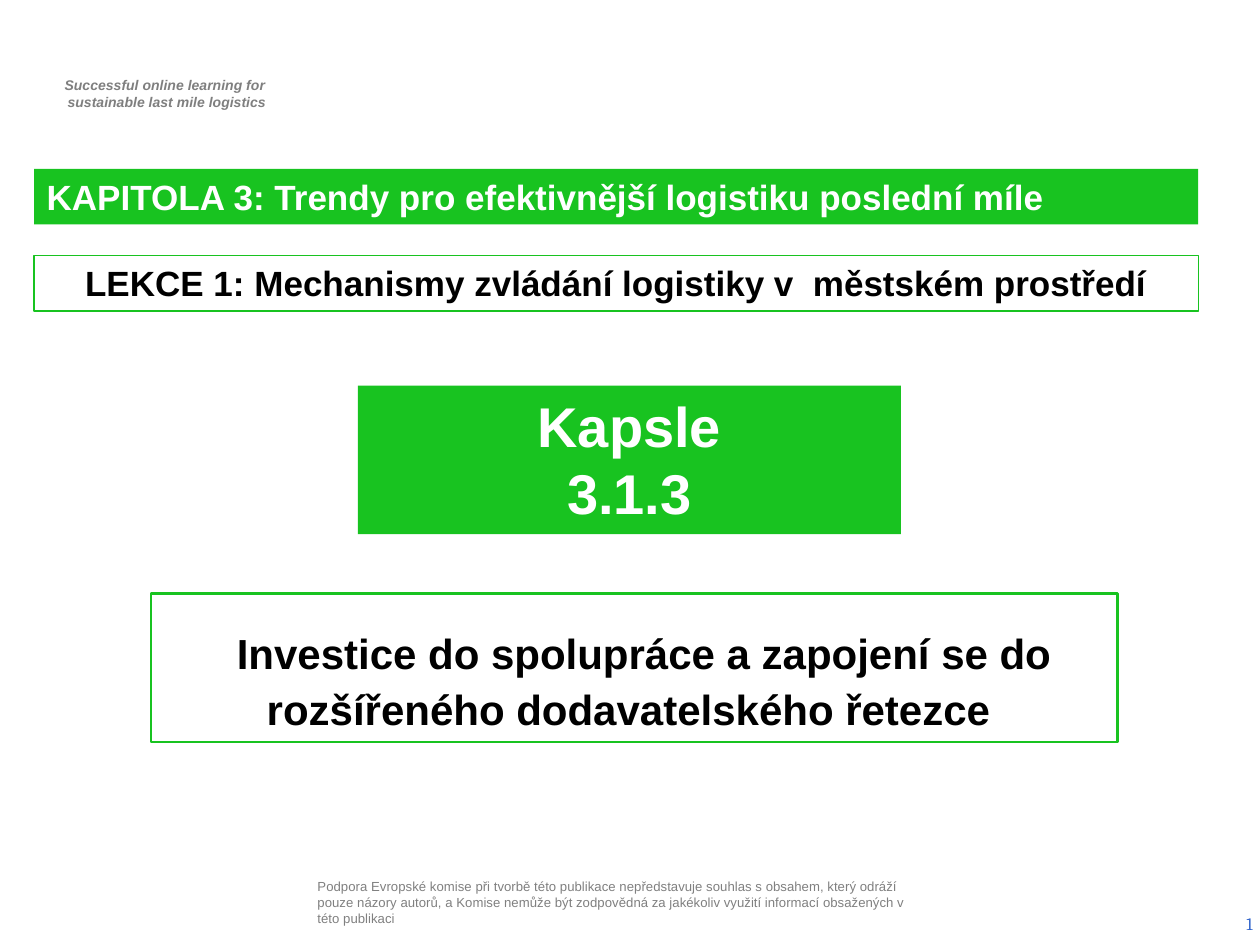
import pptx
import pptx.util
import pptx.dml.color
import pptx.enum.shapes
import pptx.enum.text
import pptx.oxml
import pptx.oxml.ns
from pptx.util import Inches

COLORS = {"green": "18C320", "white": "FFFFFF", "black": "000000",
          "gray": "7F7F7F", "note": "808080", "blue": "3366CC"}
ALIGN = pptx.enum.text.PP_ALIGN
ANCHOR = pptx.enum.text.MSO_ANCHOR
AUTO = pptx.enum.text.MSO_AUTO_SIZE


def rgb(name):
    return pptx.dml.color.RGBColor.from_string(COLORS[name])


def set_font(font, size, color, name="Arial", bold=False, italic=False):
    font.size = pptx.util.Pt(size)
    font.name = name
    font.bold = bold
    font.italic = italic
    font.color.rgb = rgb(color)


def write(sp, lines, size, color, align=ALIGN.CENTER, anchor=ANCHOR.TOP,
          inset=(0.1, 0.05), indent=0, grow=True, **font):
    tf = sp.text_frame
    tf.word_wrap = True
    tf.auto_size = AUTO.SHAPE_TO_FIT_TEXT if grow else AUTO.NONE
    tf.vertical_anchor = anchor
    tf.margin_left = tf.margin_right = Inches(inset[0])
    tf.margin_top = tf.margin_bottom = Inches(inset[1])
    for i, line in enumerate(lines):
        p = tf.add_paragraph() if i else tf.paragraphs[0]
        p.alignment = align
        if indent:
            p._p.get_or_add_pPr().set("marL", str(Inches(indent)))
        r = p.add_run()
        r.text = line
        set_font(r.font, size, color, **font)
    return tf


def paint(sp, fill=None, line=None, width=0.75):
    if fill:
        sp.fill.solid()
        sp.fill.fore_color.rgb = rgb(fill)
    else:
        sp.fill.background()
    if line:
        sp.line.color.rgb = rgb(line)
        sp.line.width = pptx.util.Pt(width)
    else:
        sp.line.fill.background()


def add_title(s, box, text):
    sp = s.shapes.title
    sp.left, sp.top, sp.width, sp.height = map(Inches, box)
    paint(sp, fill="green")
    write(sp, [text], 20, "white", align=ALIGN.LEFT, grow=False, bold=True)


def add_box(s, box, lines, size, color, fill=None, line=None, width=0.75):
    sp = s.shapes.add_shape(pptx.enum.shapes.MSO_SHAPE.RECTANGLE, *map(Inches, box))
    sp.shadow.inherit = False
    paint(sp, fill, line, width)
    return write(sp, lines, size, color, bold=True)


def add_text(s, box, lines, size, color, **fmt):
    return write(s.shapes.add_textbox(*map(Inches, box)), lines, size, color, **fmt)


def add_slide_number(s, box):
    tf = add_text(s, box, ["1"], 10, "blue", name="Cambria", align=ALIGN.RIGHT,
                  anchor=ANCHOR.MIDDLE, grow=False)
    r = tf.paragraphs[0].runs[0]._r
    fld = pptx.oxml.parse_xml(
        '<a:fld %s id="{B6F15528-21DE-4FAA-801E-634DDDAF4B2B}" type="slidenum"/>'
        % pptx.oxml.ns.nsdecls("a"))
    r.addprevious(fld)
    fld.extend(list(r))
    r.getparent().remove(r)


def main():
    prs = pptx.Presentation()
    prs.slide_width, prs.slide_height = Inches(10), Inches(7.5)
    s = prs.slides.add_slide(prs.slide_layouts[5])

    add_text(s, (0.29, 0.56, 2.03, 0.37),
             ["Successful online learning for ", "sustainable last mile logistics"],
             8, "gray", bold=True, italic=True, indent=0.04)
    add_text(s, (2.48, 6.91, 4.77, 0.5),
             ["Podpora Evropské komise při tvorbě této publikace nepředstavuje souhlas "
              "s obsahem, který odráží pouze názory autorů, a Komise nemůže být zodpovědná "
              "za jakékoliv využití informací obsažených v této publikaci"],
             7.5, "note", align=ALIGN.LEFT, anchor=ANCHOR.MIDDLE,
             inset=(0.04, 0.04), grow=False)
    add_slide_number(s, (7.71, 7.13, 2.33, 0.4))

    add_title(s, (0.27, 1.34, 9.24, 0.44),
              "KAPITOLA 3: Trendy pro efektivnější logistiku poslední míle")
    add_box(s, (0.27, 2.03, 9.24, 0.44),
            ["LEKCE 1: Mechanismy zvládání logistiky v  městském prostředí"],
            20, "black", line="green")
    add_box(s, (2.84, 3.06, 4.31, 1.18), ["Kapsle", "3.1.3"], 32, "white", fill="green")
    tf = add_box(s, (1.2, 4.71, 7.67, 1.18), [" "], 40, "black",
                 line="green", width=1.5)
    r = tf.paragraphs[0].add_run()
    r.text = "Investice do spolupráce a zapojení se do rozšířeného dodavatelského řetezce "
    set_font(r.font, 24, "black", bold=True)

    prs.save("out.pptx")


if __name__ == "__main__":
    main()
